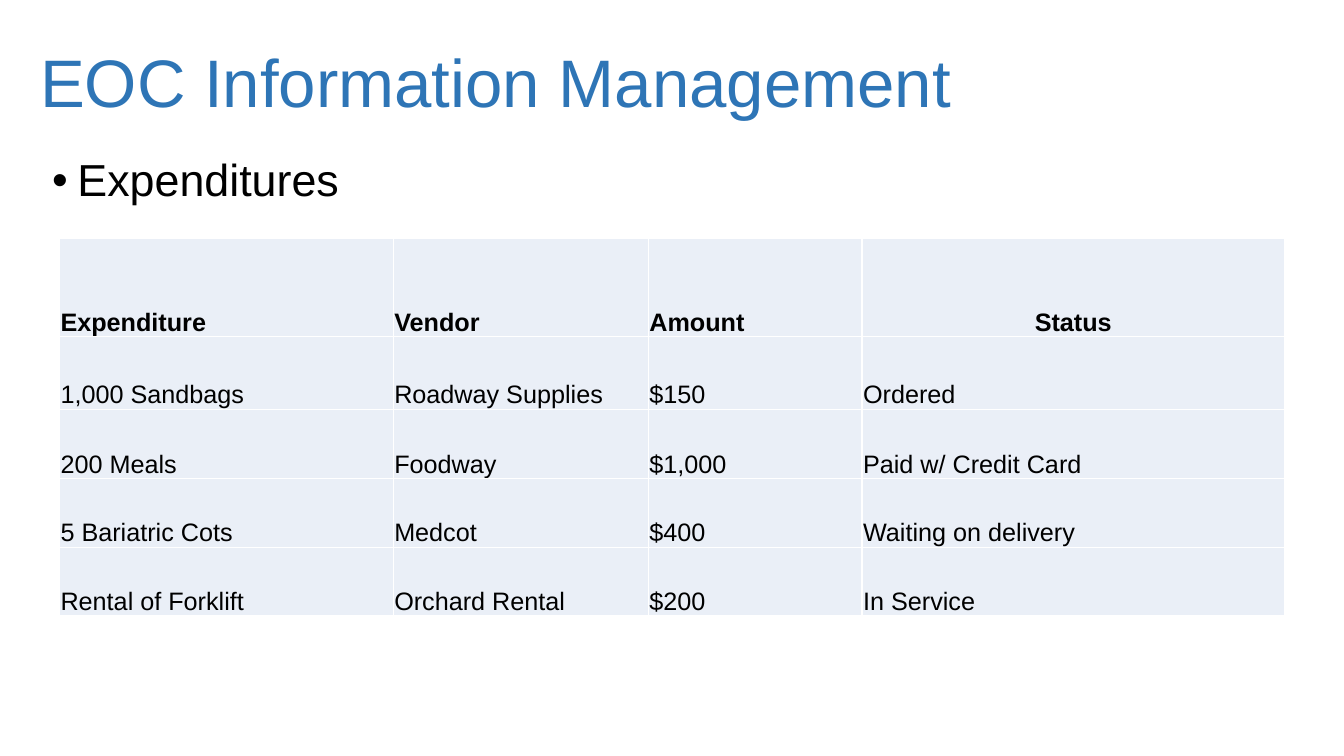
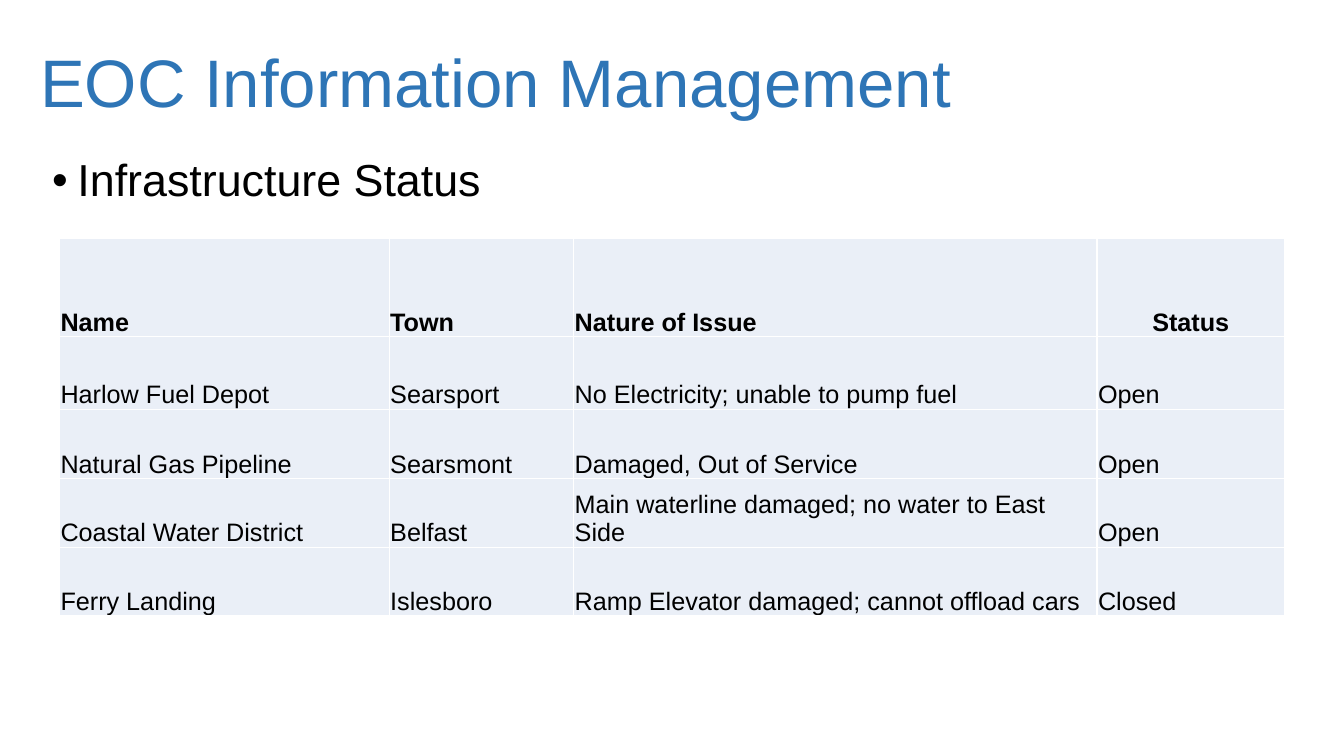
from dataclasses import dataclass

from lxml.etree import SubElement
from pptx import Presentation
from pptx.dml.color import RGBColor as RGB
from pptx.enum.text import MSO_ANCHOR as ANCHOR, PP_ALIGN as ALIGN
from pptx.oxml.ns import qn
from pptx.util import Inches, Pt


@dataclass(frozen=True)
class Theme:
    font: str = "Arial"
    title: RGB = RGB(0x2E, 0x75, 0xB6)
    text: RGB = RGB(0, 0, 0)
    cell: RGB = RGB(0xEA, 0xEF, 0xF7)
    border: str = "FFFFFF"
    title_size: int = 48
    body_size: int = 32
    cell_size: int = 18


T = Theme()
TITLE = "EOC Information Management"
TITLE_BOX = (2.25, 4.27, 96.1, 14.13)
BODY_BOX = (3.15, 20.27, 47.25, 11.33)
TABLE_BOX = (4.43, 31.6, 91.15, 49.87)
ROW_PARTS = (0.97, 0.72, 0.69, 0.68, 0.68)
CELL_FORMAT = {
    "vertical_anchor": ANCHOR.BOTTOM,
    "margin_left": Inches(0.01),
    "margin_top": Inches(0.01),
    "margin_right": Inches(0.01),
    "margin_bottom": 0,
}
SLIDES = [
    ("Expenditures", (3.31, 2.53, 2.12, 4.19), [
        ("Expenditure", "Vendor", "Amount", "Status"),
        ("1,000 Sandbags", "Roadway Supplies", "$150", "Ordered"),
        ("200 Meals", "Foodway", "$1,000", "Paid w/ Credit Card"),
        ("5 Bariatric Cots", "Medcot", "$400", "Waiting on delivery"),
        ("Rental of Forklift", "Orchard Rental", "$200", "In Service"),
    ]),
    ("Infrastructure Status", (3.27, 1.83, 5.19, 1.86), [
        ("Name", "Town", "Nature of Issue", "Status"),
        ("Harlow Fuel Depot", "Searsport", "No Electricity; unable to pump fuel", "Open"),
        ("Natural Gas Pipeline", "Searsmont", "Damaged, Out of Service", "Open"),
        ("Coastal Water District", "Belfast", "Main waterline damaged; no water to East Side", "Open"),
        ("Ferry Landing", "Islesboro", "Ramp Elevator damaged; cannot offload cars", "Closed"),
    ]),
]

prs = Presentation()
prs.slide_width, prs.slide_height = Inches(13.33), Inches(7.5)


def place(box):
    sides = (prs.slide_width, prs.slide_height) * 2
    return [round(side * share / 100) for side, share in zip(sides, box)]


def write(tf, text, size, color, bold=False):
    p = tf.paragraphs[0]
    r = p.add_run()
    r.text = text
    r.font.color.rgb = color
    for name, value in {"name": T.font, "size": Pt(size), "bold": bold}.items():
        setattr(r.font, name, value)
    return p


for heading, col_parts, rows in SLIDES:
    s = prs.slides.add_slide(prs.slide_layouts[6])

    for text, box, size, color, anchor in (
        (TITLE, TITLE_BOX, T.title_size, T.title, ANCHOR.MIDDLE),
        (heading, BODY_BOX, T.body_size, T.text, ANCHOR.TOP),
    ):
        tf = s.shapes.add_textbox(*place(box)).text_frame
        tf.word_wrap = True
        tf.vertical_anchor = anchor
        p = write(tf, text, size, color)
        p.line_spacing = 0.9

    p.space_before = Pt(10)
    pPr = p._p.get_or_add_pPr()
    pPr.set("marL", str(Inches(0.25)))
    pPr.set("indent", str(-Inches(0.25)))
    SubElement(pPr, qn("a:buFont"), typeface=T.font)
    SubElement(pPr, qn("a:buChar"), char="•")

    left, top, width, height = place(TABLE_BOX)
    table = s.shapes.add_table(len(rows), len(col_parts), left, top, width, height).table
    table.first_row = table.horz_banding = False
    for col, part in zip(table.columns, col_parts):
        col.width = round(width * part / sum(col_parts))
    for row, part in zip(table.rows, ROW_PARTS):
        row.height = round(height * part / sum(ROW_PARTS))

    for i, values in enumerate(rows):
        for j, value in enumerate(values):
            cell = table.cell(i, j)
            for name, setting in CELL_FORMAT.items():
                setattr(cell, name, setting)
            p = write(cell.text_frame, value, T.cell_size, T.text, bold=i == 0)
            centered = i == 0 and j == len(values) - 1
            p.alignment = ALIGN.CENTER if centered else ALIGN.LEFT
            tcPr = cell._tc.get_or_add_tcPr()
            for side in ("lnL", "lnR", "lnT", "lnB"):
                ln = SubElement(tcPr, qn(f"a:{side}"), w=str(Pt(1)))
                fill = SubElement(ln, qn("a:solidFill"))
                SubElement(fill, qn("a:srgbClr"), val=T.border)
            cell.fill.solid()
            cell.fill.fore_color.rgb = T.cell

prs.save("out.pptx")
